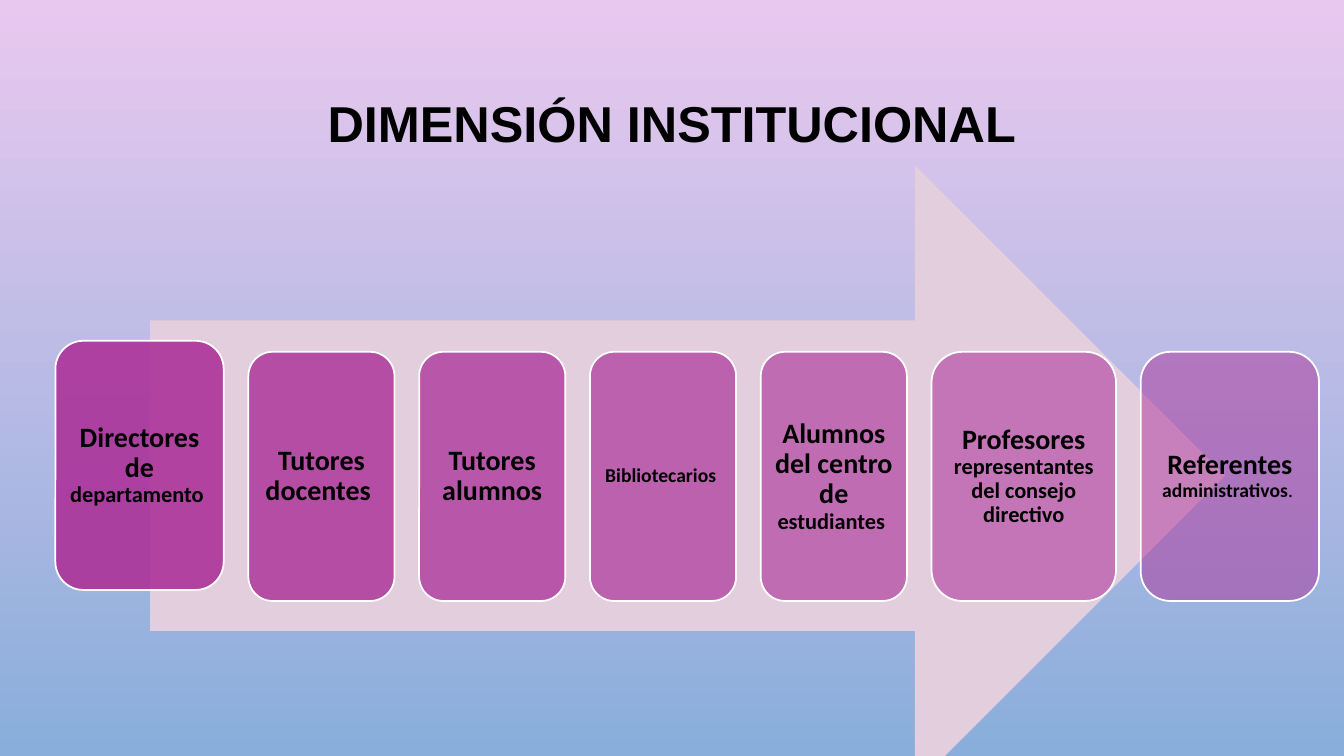
"""Build the slide on the institutional dimension: seven roles along an arrow."""
from lxml.etree import SubElement
from pptx import Presentation
from pptx.dml.color import RGBColor
from pptx.enum.shapes import MSO_SHAPE
from pptx.enum.text import MSO_ANCHOR, PP_ALIGN
from pptx.oxml.ns import qn
from pptx.util import Pt

PINK = RGBColor(0xE9, 0xC8, 0xEF)
BLUE = RGBColor(0x89, 0xAE, 0xDB)
ROSE = RGBColor(0xE3, 0xCE, 0xDE)
PURPLE = RGBColor(0xAC, 0x33, 0x9A)
WHITE = RGBColor(0xFF, 0xFF, 0xFF)
BLACK = RGBColor(0x00, 0x00, 0x00)

GAP = 17.6
ROLES = [
    (120.2, 243.4, [("Directores de ", 20, True), ("departamento ", 16, True)]),
    (104.4, 251.3, [("Tutores docentes ", 20, True)]),
    (104.4, 251.3, [("Tutores alumnos", 20, True)]),
    (104.4, 251.3, [("Bibliotecarios ", 14, True)]),
    (104.4, 251.3, [("Alumnos del centro de ", 20, True), ("estudiantes ", 16, True)]),
    (131.8, 251.3, [("Profesores ", 20, True),
                    ("representantes del consejo directivo", 16, True)]),
    (127.4, 251.3, [("Referentes ", 20, True), ("administrativos", 14, True),
                    (". ", 14, False)]),
]

prs = Presentation()
prs.slide_width, prs.slide_height = Pt(960), Pt(540)
s = prs.slides.add_slide(prs.slide_layouts[5])

bg = s.background.fill
bg.gradient()
bg.gradient_angle = 270
for stop, color, pos in zip(bg.gradient_stops, (PINK, BLUE), (0, 1)):
    stop.color.rgb = color
    stop.position = pos

title = s.shapes.title
title.left, title.top, title.width, title.height = Pt(72), Pt(49), Pt(816), Pt(126)
tf = title.text_frame
tf.text = "DIMENSIÓN INSTITUCIONAL"
tf.vertical_anchor = MSO_ANCHOR.MIDDLE
tf.margin_bottom = Pt(47)
p = tf.paragraphs[0]
p.alignment = PP_ALIGN.CENTER
p.line_spacing = 0.9
p.font.name = "Arial"
p.font.size = Pt(36)
p.font.bold = True
p.font.color.rgb = BLACK

arrow = s.shapes.add_shape(MSO_SHAPE.RIGHT_ARROW, Pt(107.2), Pt(118), Pt(768), Pt(443.5))
arrow.shadow.inherit = False
arrow.fill.solid()
arrow.fill.fore_color.rgb = ROSE
arrow.line.fill.background()

left = 39.6
for i, (width, top, runs) in enumerate(ROLES):
    box = s.shapes.add_shape(MSO_SHAPE.ROUNDED_RECTANGLE, Pt(left), Pt(top), Pt(width), Pt(178))
    left += width + GAP
    box.shadow.inherit = False
    box.fill.solid()
    box.fill.fore_color.rgb = PURPLE
    clr = box.fill._xPr.find(qn("a:solidFill"))[0]
    SubElement(clr, qn("a:alpha")).set("val", str(90000 - i * 40000 // 6))
    box.line.color.rgb = WHITE
    box.line.width = Pt(1.25)
    tf = box.text_frame
    tf.word_wrap = True
    tf.vertical_anchor = MSO_ANCHOR.MIDDLE
    tf.margin_left = tf.margin_right = tf.margin_top = tf.margin_bottom = Pt(4)
    p = tf.paragraphs[0]
    p.alignment = PP_ALIGN.CENTER
    p.line_spacing = 0.9
    p.font.name = "Calibri"
    p.font.color.rgb = BLACK
    for text, size, bold in runs:
        r = p.add_run()
        r.text = text
        r.font.size = Pt(size)
        r.font.bold = bold

prs.save("out.pptx")
